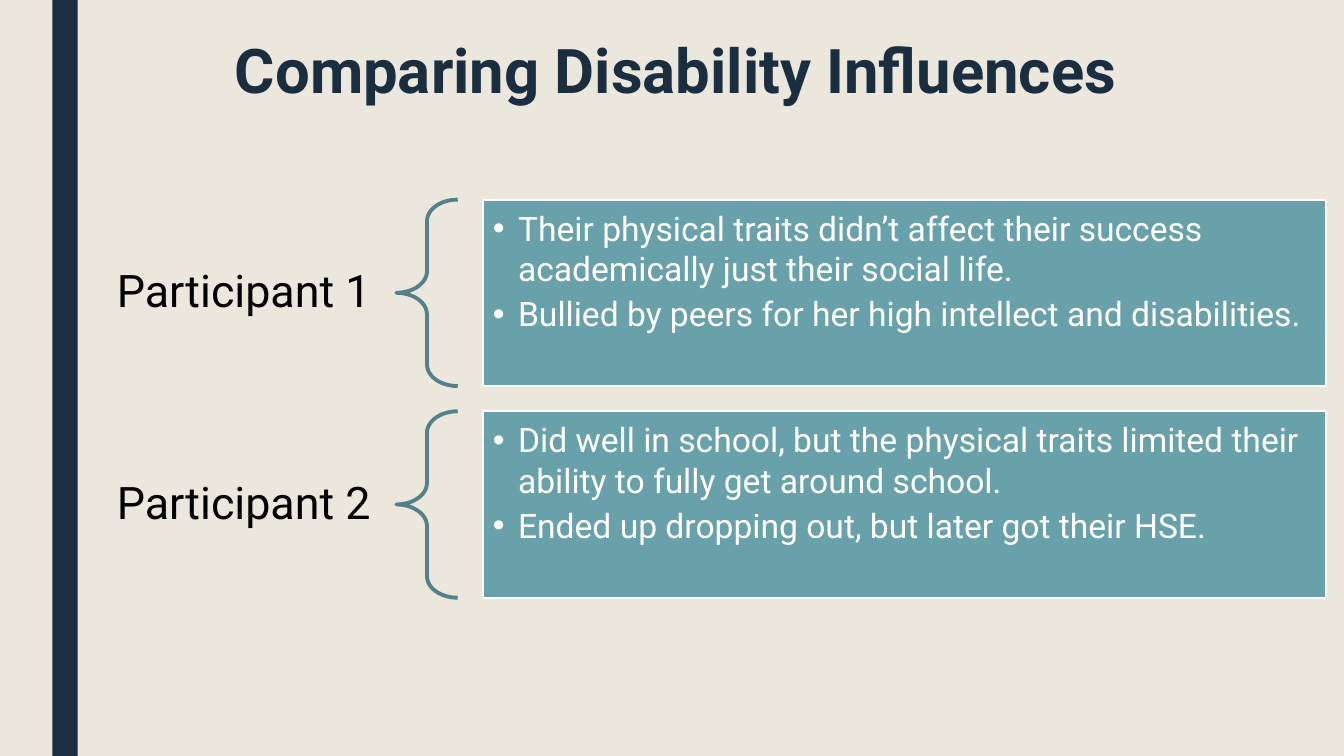
from dataclasses import dataclass

from lxml import etree
from pptx import Presentation
from pptx.dml.color import RGBColor
from pptx.enum import shapes, text
from pptx.oxml import ns
from pptx.util import Inches, Pt

CREAM = RGBColor(0xEB, 0xE7, 0xDD)
NAVY = RGBColor(0x1A, 0x2E, 0x40)
TEAL = RGBColor(0x69, 0xA1, 0xAB)
DARK_TEAL = RGBColor(0x54, 0x81, 0x89)
WHITE = RGBColor(0xFF, 0xFF, 0xFF)
BLACK = RGBColor(0, 0, 0)
FONT = "Roboto"

ROW_TOP, ROW_PITCH, ROW_HEIGHT = 1.98, 2.1, 1.85
LABEL_HEIGHT = 1.41


@dataclass
class Participant:
    label: str
    findings: list[str]


PARTICIPANTS = [
    Participant("Participant 1", [
        "Their physical traits didn’t affect their success academically just their social life.",
        "Bullied by peers for her high intellect and disabilities.",
    ]),
    Participant("Participant 2", [
        "Did well in school, but the physical traits limited their ability to fully get around school.",
        "Ended up dropping out, but later got their HSE.",
    ]),
]


def add_run(paragraph, words: str, size: float, color: RGBColor, bold: bool = False) -> None:
    run = paragraph.add_run()
    run.text = words
    run.font.name = FONT
    run.font.size = Pt(size)
    run.font.bold = bold
    run.font.color.rgb = color


def set_frame(frame, anchor, side: float, top: float, bottom: float) -> None:
    frame.word_wrap = True
    frame.auto_size = text.MSO_AUTO_SIZE.NONE
    frame.vertical_anchor = anchor
    frame.margin_left = frame.margin_right = Inches(side)
    frame.margin_top, frame.margin_bottom = Inches(top), Inches(bottom)


def add_bullet(paragraph) -> None:
    properties = paragraph._p.get_or_add_pPr()
    properties.set("marL", str(Inches(0.25)))
    properties.set("indent", str(Inches(-0.25)))
    etree.SubElement(properties, ns.qn("a:buFont"), typeface="Arial")
    etree.SubElement(properties, ns.qn("a:buChar"), char="•")


def add_label(slide, label: str, top: float) -> None:
    box = slide.shapes.add_textbox(
        Inches(0.86), Inches(top + (ROW_HEIGHT - LABEL_HEIGHT) / 2),
        Inches(3.07), Inches(LABEL_HEIGHT))
    set_frame(box.text_frame, text.MSO_ANCHOR.MIDDLE, 0.25, 0.09, 0.09)
    paragraph = box.text_frame.paragraphs[0]
    paragraph.alignment = text.PP_ALIGN.RIGHT
    paragraph.line_spacing = 0.9
    add_run(paragraph, label, 32, BLACK)


def add_brace(slide, top: float) -> None:
    brace = slide.shapes.add_shape(
        shapes.MSO_SHAPE.LEFT_BRACE, Inches(3.93), Inches(top), Inches(0.61), Inches(ROW_HEIGHT))
    brace.shadow.inherit = False
    brace.adjustments[0] = 0.35
    brace.fill.background()
    brace.line.color.rgb = DARK_TEAL
    brace.line.width = Pt(2.75)


def add_findings(slide, findings: list[str], top: float) -> None:
    panel = slide.shapes.add_shape(
        shapes.MSO_SHAPE.RECTANGLE, Inches(4.79), Inches(top), Inches(8.36), Inches(ROW_HEIGHT))
    panel.shadow.inherit = False
    panel.fill.solid()
    panel.fill.fore_color.rgb = TEAL
    panel.line.color.rgb = WHITE
    panel.line.width = Pt(1.5)
    frame = panel.text_frame
    set_frame(frame, text.MSO_ANCHOR.TOP, 0.1, 0.08, 0.1)
    for index, finding in enumerate(findings):
        paragraph = frame.add_paragraph() if index else frame.paragraphs[0]
        paragraph.alignment = text.PP_ALIGN.LEFT
        paragraph.space_after = Pt(3.6)
        add_bullet(paragraph)
        add_run(paragraph, finding, 24, WHITE)


def main() -> None:
    deck = Presentation()
    deck.slide_width, deck.slide_height = Inches(13.33), Inches(7.5)
    slide = deck.slides.add_slide(deck.slide_layouts[5])
    slide.background.fill.solid()
    slide.background.fill.fore_color.rgb = CREAM

    # Side bar
    bar = slide.shapes.add_shape(
        shapes.MSO_SHAPE.RECTANGLE, Inches(0.52), 0, Inches(0.25), deck.slide_height)
    bar.shadow.inherit = False
    bar.fill.solid()
    bar.fill.fore_color.rgb = NAVY
    bar.line.fill.background()

    # Title
    title = slide.shapes.title
    title.left, title.top = Inches(2.23), Inches(0.36)
    title.width, title.height = Inches(10.5), Inches(1.62)
    set_frame(title.text_frame, text.MSO_ANCHOR.TOP, 0.1, 0.05, 0.05)
    heading = title.text_frame.paragraphs[0]
    heading.alignment = text.PP_ALIGN.LEFT
    heading.line_spacing = 0.89
    add_run(heading, "Comparing Disability Influences", 44, NAVY, bold=True)

    # One row per participant
    for index, participant in enumerate(PARTICIPANTS):
        top = ROW_TOP + index * ROW_PITCH
        add_label(slide, participant.label, top)
        add_brace(slide, top)
        add_findings(slide, participant.findings, top)

    deck.save("out.pptx")


if __name__ == "__main__":
    main()
